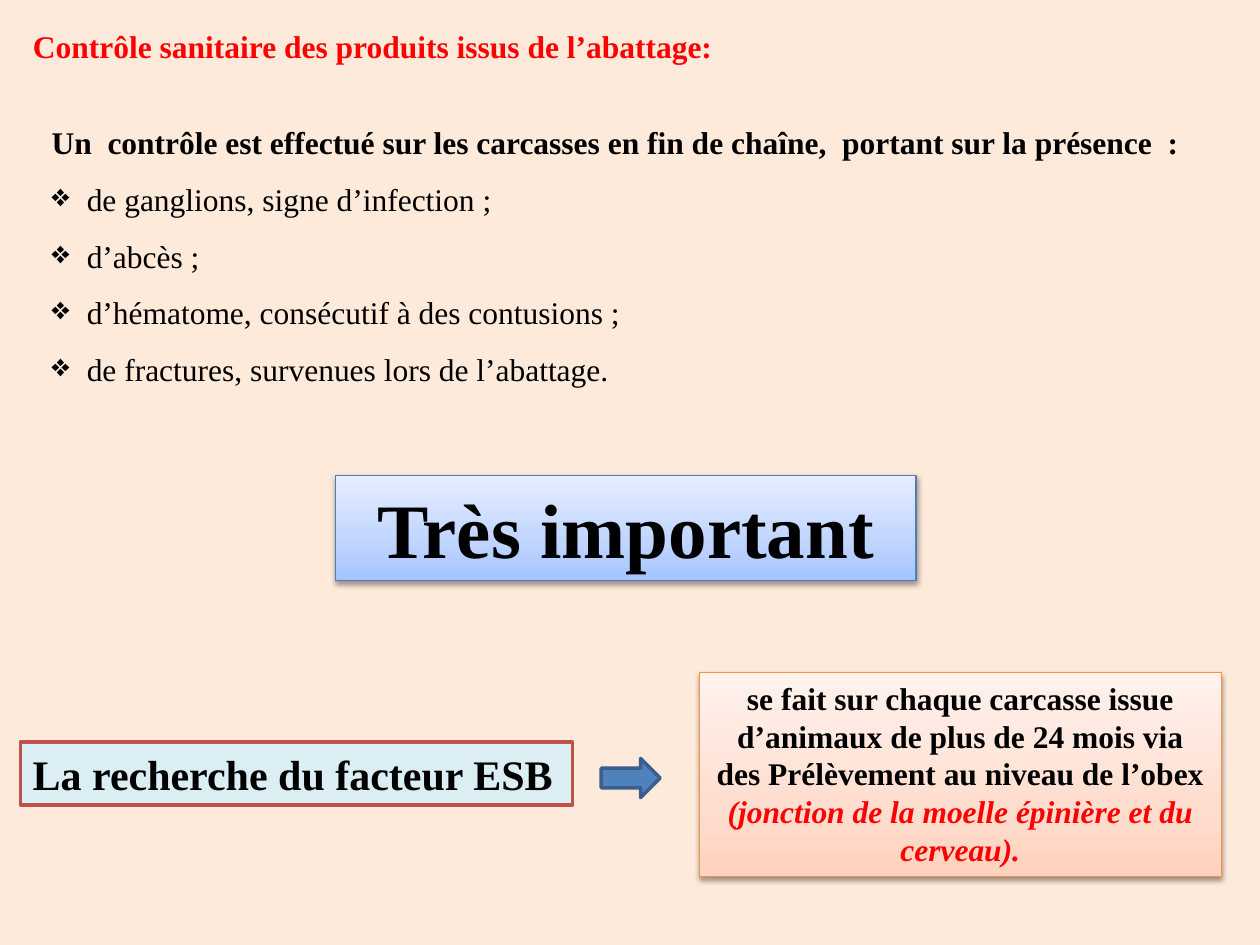
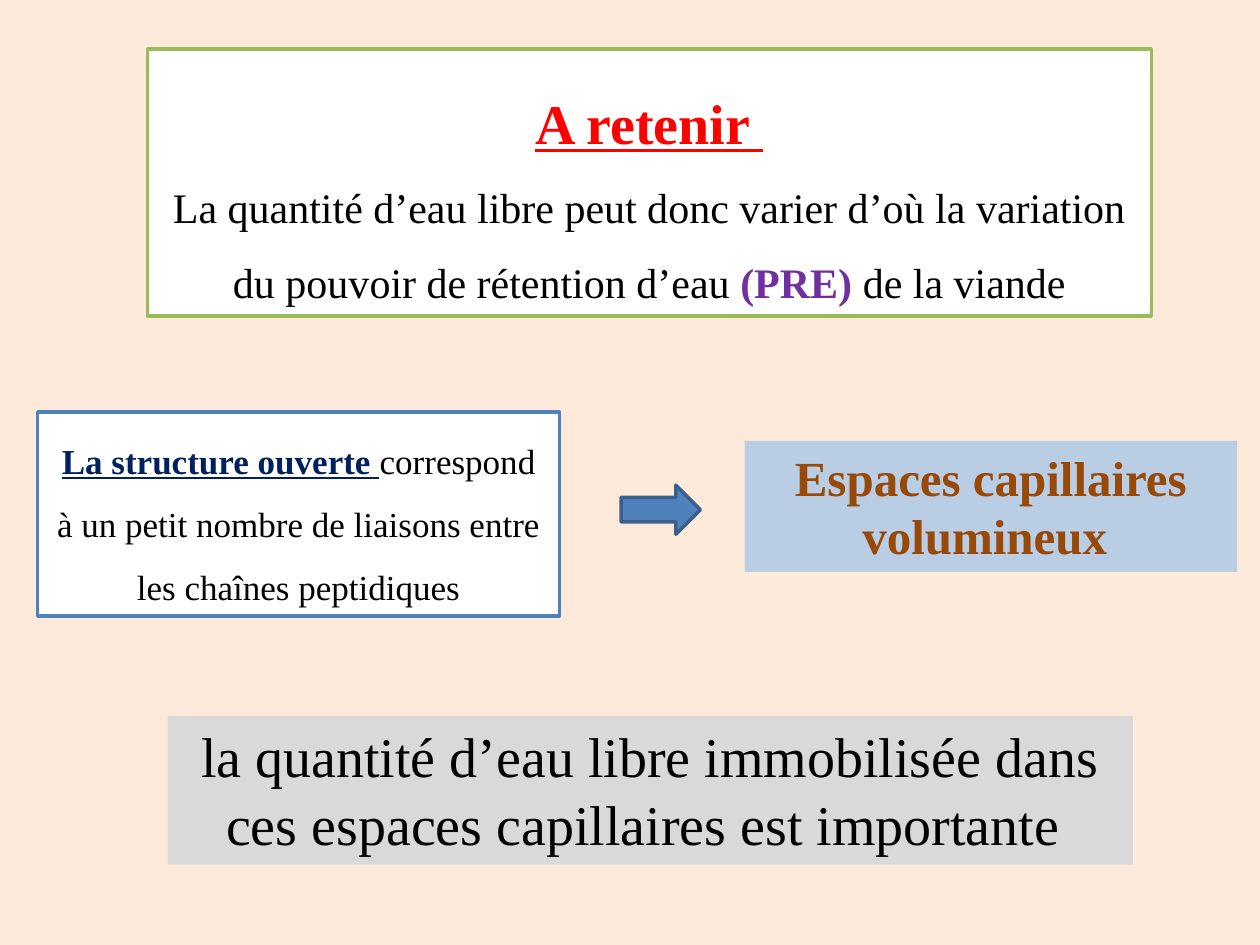
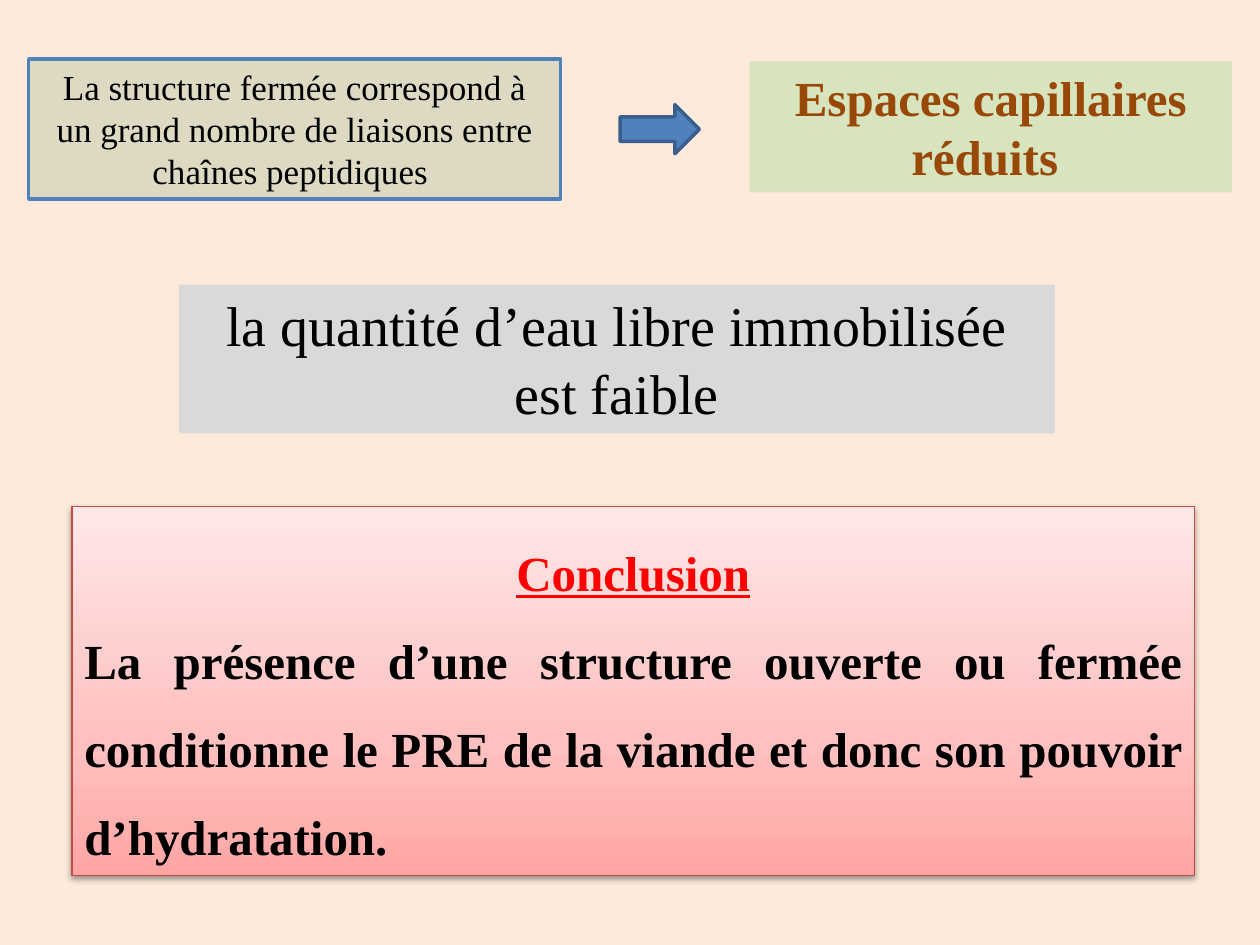
from copy import deepcopy

from lxml.etree import SubElement
from pptx import Presentation
from pptx.dml.color import RGBColor
from pptx.enum.shapes import MSO_SHAPE as Kind
from pptx.enum.text import MSO_ANCHOR as Anchor, MSO_AUTO_SIZE as Fit, PP_ALIGN as Align
from pptx.oxml.ns import qn
from pptx.util import Cm, Pt

FACE = "Times New Roman"
BLACK, RED, BROWN = "000000", "FF0000", "984807"
WHITE, GREY, BLUE, EDGE = "FFFFFF", "D9D9D9", "4F81BD", "3A5F8C"
hue = RGBColor.from_string


def box(slide, at, fill, line=None, width=2, kind=Kind.RECTANGLE):
    """Add a shape; three fill colours make a bottom-to-top gradient with a shadow."""
    shape = slide.shapes.add_shape(kind, *map(Cm, at))
    shape.shadow.inherit = False
    if line:
        shape.line.color.rgb = hue(line)
        shape.line.width = Pt(width)
    else:
        shape.line.fill.background()
    if isinstance(fill, str):
        shape.fill.solid()
        shape.fill.fore_color.rgb = hue(fill)
        return shape

    shape.fill.gradient()
    shape.fill.gradient_angle = 90
    props = shape.element.spPr
    stops = props.find(".//" + qn("a:gsLst"))
    stops.insert(1, deepcopy(stops[0]))
    for stop, place, color in zip(shape.fill.gradient_stops, (0, 0.35, 1), fill):
        stop.position = place
        stop.color.rgb = hue(color)
    shade = SubElement(props.find(qn("a:effectLst")), qn("a:outerShdw"), blurRad="40000",
                       dist="20000", dir="5400000", rotWithShape="0")
    black = SubElement(shade, qn("a:srgbClr"), val=BLACK)
    SubElement(black, qn("a:alpha"), val="38000")
    return shape


def write(shape, *paras, align=Align.CENTER, gap=1.0):
    """Fill a shape with paragraphs: (size, (text, colour, marks), ...), marks from "biu"."""
    frame = shape.text_frame
    frame.word_wrap = True
    frame.auto_size = Fit.NONE
    frame.vertical_anchor = Anchor.TOP
    for n, (size, *runs) in enumerate(paras):
        para = frame.add_paragraph() if n else frame.paragraphs[0]
        para.alignment = align
        para.line_spacing = gap
        para.font.name = FACE
        para.font.size = Pt(size)
        for text, color, marks in runs:
            run = para.add_run()
            run.text = text
            font = para.font if len(runs) == 1 else run.font
            font.color.rgb = hue(color)
            font.bold = "b" in marks
            font.italic = "i" in marks
            font.underline = "u" in marks
    return frame


deck = Presentation()
deck.slide_width, deck.slide_height = Cm(25.4), Cm(19.05)
paper = deck.slide_master.background.fill
paper.solid()
paper.fore_color.rgb = hue("FDEADA")
titled, blank = deck.slide_layouts[5], deck.slide_layouts[6]

# Slide 1: checks on the carcass
slide = deck.slides.add_slide(titled)
title = slide.shapes.title
title.left, title.top, title.width, title.height = map(Cm, (0.41, 0.41, 16.46, 1.02))
write(title, (18, ("Contrôle sanitaire des produits issus de l’abattage:", RED, "b")),
      align=Align.LEFT)

signs = ["de ganglions, signe d’infection ;", "d’abcès ;",
         "d’hématome, consécutif à des contusions ;",
         "de fractures, survenues lors de l’abattage."]
checks = slide.shapes.add_textbox(*map(Cm, (0.79, 1.98, 23.83, 6.02)))
lead = ("Un  contrôle est effectué sur les carcasses en fin de chaîne,  "
        "portant sur la présence  :")
frame = write(checks, (18, (lead, BLACK, "b")),
              *[(18, (sign, BLACK, "")) for sign in signs],
              align=Align.JUSTIFY, gap=1.5)
for para in frame.paragraphs[1:]:
    props = para._p.get_or_add_pPr()
    props.set("marL", str(Cm(0.71)))
    props.set("indent", str(-Cm(0.71)))
    mark = props.makeelement(qn("a:buChar"), {"char": "❖"})
    props.find(qn("a:defRPr")).addprevious(mark)

test = box(slide, (0.41, 14.96, 11.13, 1.27), "DBEEF4", "C0504D")
write(test, (24, ("La recherche du facteur ESB", BLACK, "b")), align=Align.LEFT)
method = box(slide, (14.1, 13.56, 10.52, 4.11), ("FFD2BD", "FFDED0", "FFF2ED"), "F69240", 0.75)
write(method,
      (18, ("se fait sur chaque carcasse issue", BLACK, "b")),
      (18, ("d’animaux de plus de 24 mois via des Prélèvement au niveau de l’obex", BLACK, "b")),
      (18, ("(jonction de la moelle épinière et du cerveau).", RED, "bi")))
box(slide, (12.12, 15.29, 1.19, 0.79), BLUE, EDGE, kind=Kind.RIGHT_ARROW)
alert = box(slide, (6.76, 9.58, 11.71, 2.13), ("A4C4FF", "BFD4FF", "E6EEFF"), "4B7EBC", 0.75)
write(alert, (44, ("Très important", BLACK, "b")))

# Slide 2: open structure
slide = deck.slides.add_slide(blank)
recall = box(slide, (2.97, 0.99, 20.24, 5.38), WHITE, "9BBB59")
write(recall,
      (32, ("A retenir ", RED, "bu")),
      (24, ("La quantité d’eau libre peut donc varier d’où la variation "
            "du pouvoir de rétention d’eau ", BLACK, ""),
       ("(PRE) ", "7030A0", "b"), ("de la viande", BLACK, "")), gap=1.5)
cause = box(slide, (0.76, 8.31, 10.52, 4.11), WHITE, BLUE)
write(cause,
      (20, ("La structure ouverte ", "002060", "bu"),
       ("correspond à un petit nombre de liaisons entre les chaînes peptidiques", BLACK, "")),
      gap=1.5)
water = box(slide, (3.38, 14.43, 19.46, 3), GREY)
write(water, (32, ("la quantité d’eau libre immobilisée dans ces espaces capillaires "
                   "est importante ", BLACK, "")))
space = box(slide, (15.01, 8.89, 9.93, 2.64), "B9CDE5")
write(space, (28, ("Espaces capillaires volumineux ", BROWN, "b")))
box(slide, (12.52, 9.78, 1.6, 0.99), BLUE, EDGE, kind=Kind.RIGHT_ARROW)

# Slide 3: closed structure and conclusion
slide = deck.slides.add_slide(blank)
water = box(slide, (3.61, 5.74, 17.65, 3), GREY)
write(water, (32, ("la quantité d’eau libre immobilisée est faible", BLACK, "")))
cause = box(slide, (0.58, 1.19, 10.72, 2.82), "DDD9C3", BLUE)
write(cause, (20, ("La structure fermée correspond à un grand nombre de liaisons "
                   "entre chaînes peptidiques ", BLACK, "")))
space = box(slide, (15.11, 1.24, 9.73, 2.64), "D7E4BD")
write(space, (28, ("Espaces capillaires réduits ", BROWN, "b")))
box(slide, (12.5, 2.11, 1.6, 0.99), BLUE, EDGE, kind=Kind.RIGHT_ARROW)
final = box(slide, (1.45, 10.21, 22.63, 7.44), ("FFA6A5", "FFC0BF", "FFE7E7"), "BF4C48", 0.75)
frame = write(final,
              (28, ("Conclusion", RED, "bu")),
              (28, ("La présence d’une structure ouverte ou fermée conditionne le PRE "
                    "de la viande et donc son pouvoir d’hydratation.", BLACK, "b")),
              align=Align.JUSTIFY, gap=1.5)
frame.paragraphs[0].alignment = Align.CENTER

deck.save("out.pptx")
